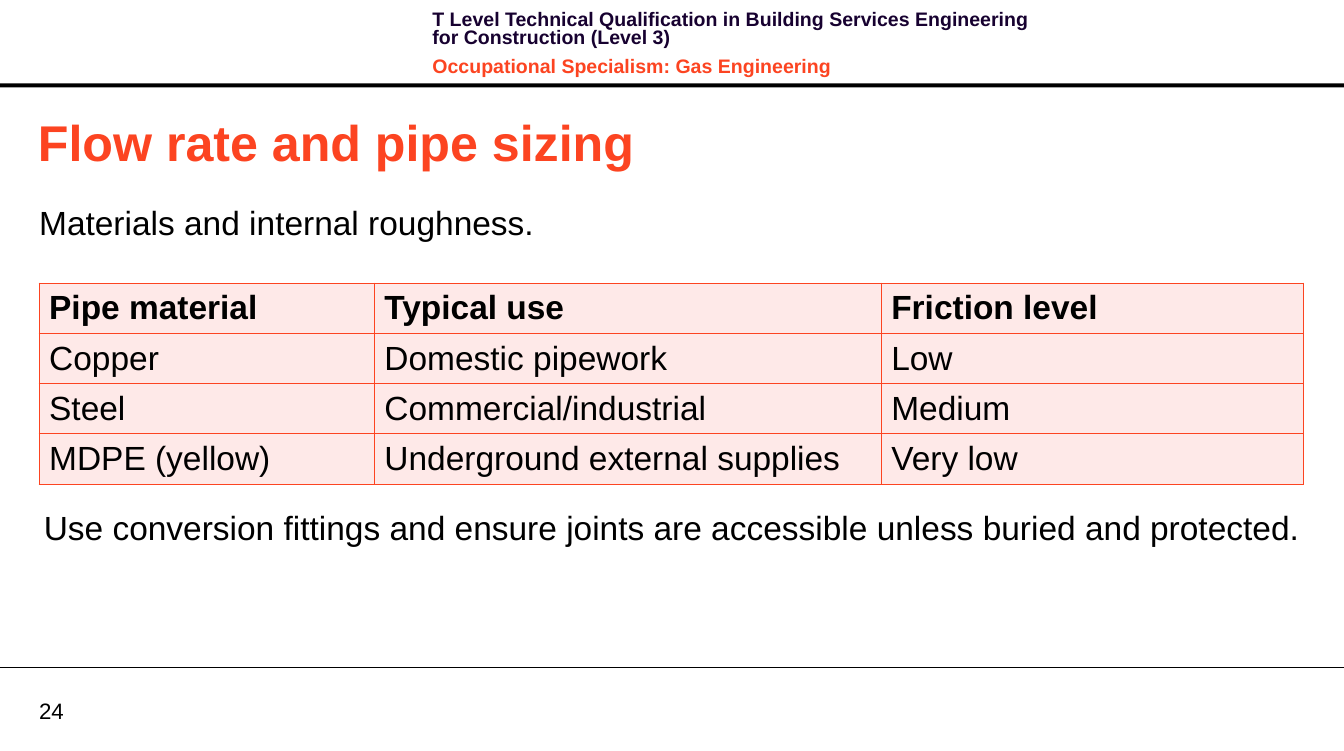
from dataclasses import dataclass

import lxml.etree
import pptx
import pptx.dml.color
import pptx.enum.shapes
import pptx.enum.text
import pptx.oxml.ns
import pptx.util

RGBColor = pptx.dml.color.RGBColor
Anchor = pptx.enum.text.MSO_ANCHOR
Align = pptx.enum.text.PP_ALIGN
Pt = pptx.util.Pt
qn = pptx.oxml.ns.qn

BLACK = RGBColor(0x00, 0x00, 0x00)
NAVY = RGBColor(0x17, 0x01, 0x30)
ORANGE = RGBColor(0xFC, 0x44, 0x21)
PINK = RGBColor(0xFE, 0xE9, 0xE8)
FONT = "Arial"
SCALE = 9144
WIDTH, HEIGHT = 1339, 748
LEFT, SPAN = 39, 1260


@dataclass
class Line:
    text: str
    size: int
    color: RGBColor = BLACK
    bold: bool = False
    align: Align = Align.LEFT
    pitch: float | pptx.util.Length | None = None
    before: int = 0
    after: int = 0


@dataclass
class Box:
    left: int
    top: int
    width: int
    height: int
    lines: list[Line]
    inset: tuple[int, int] = (0, 0)
    anchor: Anchor = Anchor.TOP


PITCH = Pt(13.1)
BOXES = [
    Box(LEFT, 694, 64, 27, [Line("24", 16)], anchor=Anchor.MIDDLE),
    Box(421, 7, 637, 64, [
        Line("T Level Technical Qualification in Building Services Engineering "
             "for Construction (Level 3)", 14, NAVY, True, pitch=PITCH, after=4),
        Line("Occupational Specialism: Gas Engineering", 14, ORANGE, True,
             pitch=PITCH, before=4, after=4),
    ], (10, 5)),
    Box(28, 105, 1272, 71, [Line("Flow rate and pipe sizing", 36, ORANGE, True)],
        (10, 5), Anchor.MIDDLE),
    Box(LEFT, 197, SPAN, 41, [Line("Materials and internal roughness.", 24, pitch=1.1)]),
    Box(LEFT, 501, SPAN, 41, [
        Line("Use conversion fittings and ensure joints are accessible unless "
             "buried and protected.", 24, align=Align.CENTER, pitch=1.1),
    ]),
]

COLS = [334, 505, 421]
ROW = 47
ROWS = [
    ["Pipe material", "Typical use", "Friction level"],
    ["Copper", "Domestic pipework", "Low"],
    ["Steel", "Commercial/industrial", "Medium"],
    ["MDPE (yellow)", "Underground external supplies", "Very low"],
]


def px(count: int) -> int:
    return count * SCALE


def write(para, line: Line) -> None:
    para.text = line.text
    para.alignment = line.align
    para.line_spacing = line.pitch
    para.space_before = Pt(line.before)
    para.space_after = Pt(line.after)
    font = para.runs[0].font
    font.name = FONT
    font.size = Pt(line.size)
    font.bold = line.bold
    font.color.rgb = line.color


def add_box(slide, box: Box) -> None:
    shape = slide.shapes.add_textbox(px(box.left), px(box.top), px(box.width), px(box.height))
    frame = shape.text_frame
    frame.word_wrap = True
    frame.vertical_anchor = box.anchor
    frame.margin_left = frame.margin_right = px(box.inset[0])
    frame.margin_top = frame.margin_bottom = px(box.inset[1])
    for index, line in enumerate(box.lines):
        para = frame.add_paragraph() if index else frame.paragraphs[0]
        write(para, line)


def add_rules(slide) -> None:
    bar = slide.shapes.add_shape(
        pptx.enum.shapes.MSO_SHAPE.RECTANGLE, 0, px(83), px(WIDTH), px(4))
    bar.shadow.inherit = False
    bar.fill.solid()
    bar.fill.fore_color.rgb = BLACK
    bar.line.fill.background()
    rule = slide.shapes.add_connector(
        pptx.enum.shapes.MSO_CONNECTOR.STRAIGHT, 0, px(665), px(WIDTH), px(665))
    rule.line.color.rgb = BLACK
    rule.line.width = Pt(0.75)
    lxml.etree.SubElement(rule._element.spPr, qn("a:effectLst"))


def add_edges(cell) -> None:
    props = cell._tc.get_or_add_tcPr()
    for side in ("L", "R", "T", "B"):
        edge = lxml.etree.SubElement(props, qn(f"a:ln{side}"), w=str(Pt(1)))
        fill = lxml.etree.SubElement(edge, qn("a:solidFill"))
        lxml.etree.SubElement(fill, qn("a:srgbClr"), val=str(ORANGE))


def add_grid(slide) -> None:
    frame = slide.shapes.add_table(
        len(ROWS), len(COLS), px(LEFT), px(282), px(SPAN), px(ROW * len(ROWS)))
    table = frame.table
    table.first_row = table.horz_banding = False
    for index, width in enumerate(COLS):
        table.columns[index].width = px(width)
    for row, texts in enumerate(ROWS):
        table.rows[row].height = px(ROW)
        for col, text in enumerate(texts):
            cell = table.cell(row, col)
            add_edges(cell)
            cell.fill.solid()
            cell.fill.fore_color.rgb = PINK
            cell.vertical_anchor = Anchor.MIDDLE
            write(cell.text_frame.paragraphs[0], Line(text, 24, bold=row == 0))


def main() -> None:
    deck = pptx.Presentation()
    deck.slide_width, deck.slide_height = px(WIDTH), px(HEIGHT)
    slide = deck.slides.add_slide(deck.slide_layouts[6])
    add_rules(slide)
    for box in BOXES:
        add_box(slide, box)
    add_grid(slide)
    deck.save("out.pptx")


if __name__ == "__main__":
    main()
